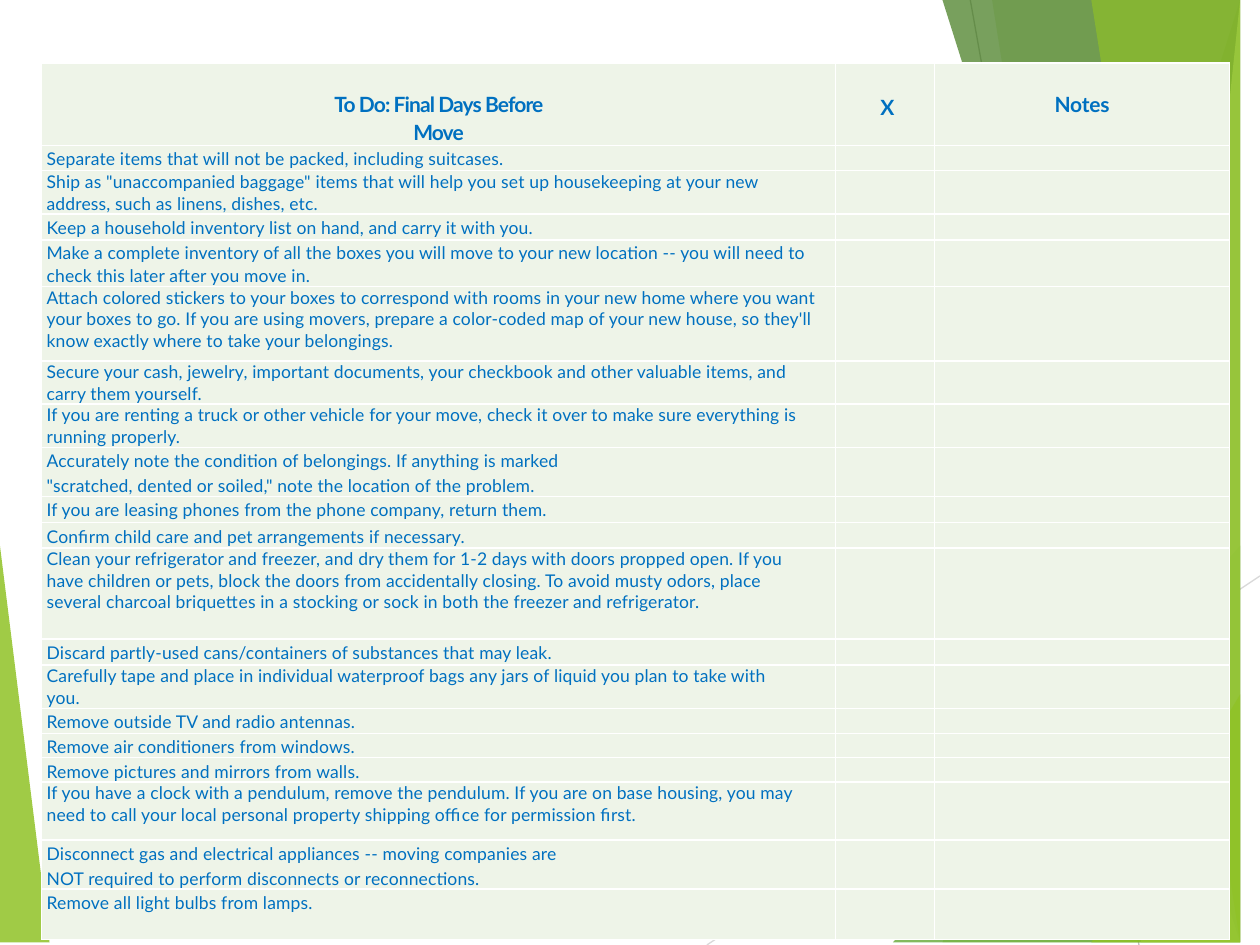
from lxml import etree
from pptx import Presentation
from pptx import util as u
from pptx.dml.color import RGBColor
from pptx.enum import shapes, text
from pptx.oxml.ns import qn

FONT = "Lato"
BLUE, CELL_GREEN, WHITE = "0070C0", "EEF4E8", "FFFFFF"
RIGHT, BOTTOM = 25.4, 19.05  # slide size in cm

# Backdrop: colour, opacity in percent, corner points in cm
LEFT_WEDGE = ("90C226", 85, [(0, 11.15), (1.24, BOTTOM), (0, BOTTOM)])
RIGHT_FACETS = [
    ("90C226", 30, [(24.77, 0), (19.15, BOTTOM), (RIGHT, BOTTOM), (RIGHT, 0)]),
    ("90C226", 20, [(20.02, 0), (23.34, BOTTOM), (RIGHT, BOTTOM), (RIGHT, 0)]),
    ("54A021", 72, [(18.44, BOTTOM), (RIGHT, 10.9), (RIGHT, BOTTOM)]),
    ("3F7819", 70, [(19.48, 0), (24.64, BOTTOM), (RIGHT, BOTTOM), (RIGHT, 0)]),
    ("C0E474", 70, [(24.92, 0), (23.04, BOTTOM), (RIGHT, BOTTOM), (RIGHT, 0)]),
    ("90C226", 65, [(22.43, 0), (25.04, BOTTOM), (RIGHT, BOTTOM), (25.35, 0)]),
    ("90C226", 80, [(22.38, BOTTOM), (RIGHT, 13.59), (RIGHT, BOTTOM)]),
]

# Headings: text, top margin in pt, left and right indent in cm, line spacing, tracking
HEADINGS = [
    ("To Do: Final Days Before Move", 14, 5.54, 5.54, 1.15, -0.5),
    ("X", 17.6, 0.2, 0.1, 1.03, 0.1),
    ("Notes", 14, 1.65, 1.65, 1.15, -0.1),
]
COLUMN_WIDTHS = [16, 2, 5.95]
HEADING_HEIGHT = 1.07

# Tasks: row height in cm, line spacing, right indent in cm, paragraphs
TASKS = [
    (0.51, 1.15, 0.3, ["Separate items that will not be packed, including suitcases."]),
    (0.81, 1.03, 0.3, ['Ship as "unaccompanied baggage" items that will help you set up '
                       "housekeeping at your new address, such as linens, dishes, etc."]),
    (0.53, 1.15, 0.3, ["Keep a household inventory list on hand, and carry it with you."]),
    (0.84, 1.1, 0, ["Make a complete inventory of all the boxes you will move to your new "
                    "location -- you will need to check this later after you move in."]),
    (1.5, 1.03, 0.3, ["Attach colored stickers to your boxes to correspond with rooms in your "
                      "new home where you want your boxes to go. If you are using movers, "
                      "prepare a color-coded map of your new house, so they'll know exactly "
                      "where to take your belongings."]),
    (0.81, 1.03, 0.3, ["Secure your cash, jewelry, important documents, your checkbook and "
                       "other valuable items, and carry them yourself."]),
    (0.84, 1.03, 0.3, ["If you are renting a truck or other vehicle for your move, check it "
                       "over to make sure everything is running properly."]),
    (0.81, 1.15, 0.3, ["Accurately note the condition of belongings. If anything is marked",
                       '"scratched, dented or soiled," note the location of the problem.']),
    (0.53, 1.15, 0.3, ["If you are leasing phones from the phone company, return them."]),
    (0.51, 1.15, 0.3, ["Confirm child care and pet arrangements if necessary."]),
    (1.83, 1.03, 0.3, ["Clean your refrigerator and freezer, and dry them for 1-2 days with "
                       "doors propped open. If you have children or pets, block the doors from "
                       "accidentally closing. To avoid musty odors, place several charcoal "
                       "briquettes in a stocking or sock in both the freezer and refrigerator."]),
    (0.53, 1.15, 0.3, ["Discard partly-used cans/containers of substances that may leak."]),
    (0.81, 1.03, 0.9, ["Carefully tape and place in individual waterproof bags any jars of "
                       "liquid you plan to take with you."]),
    (0.51, 1.15, 0.3, ["Remove outside TV and radio antennas."]),
    (0.48, 1.15, 0.3, ["Remove air conditioners from windows."]),
    (0.48, 1.15, 0.3, ["Remove pictures and mirrors from walls."]),
    (1.17, 1.03, 0.3, ["If you have a clock with a pendulum, remove the pendulum. If you are on "
                       "base housing, you may need to call your local personal property "
                       "shipping office for permission first."]),
    (0.81, 1.15, 0.3, ["Disconnect gas and electrical appliances -- moving companies are",
                       "NOT required to perform disconnects or reconnections."]),
    (1.02, 1.15, 0.3, ["Remove all light bulbs from lamps."]),
]


def color(hex_string):
    return RGBColor.from_string(hex_string)


def add_facet(slide, fill, opacity, corners):
    builder = slide.shapes.build_freeform(*corners[0], scale=u.Cm(1))
    builder.add_line_segments(corners[1:], close=True)
    facet = builder.convert_to_shape()
    facet.shadow.inherit = False
    facet.line.fill.background()
    facet.fill.solid()
    facet.fill.fore_color.rgb = color(fill)
    tint = facet.fill._xPr.find(".//" + qn("a:srgbClr"))
    etree.SubElement(tint, qn("a:alpha"), val=str(opacity * 1000))


def add_ray(slide, start, end, stroke):
    ends = [u.Cm(value) for value in (*start, *end)]
    ray = slide.shapes.add_connector(shapes.MSO_CONNECTOR.STRAIGHT, *ends)
    ray.line.color.rgb = color(stroke)
    ray.line.width = u.Pt(0.75)
    etree.SubElement(ray._element.spPr, qn("a:effectLst"))


def style_cell(cell):
    """White borders, no margins, pale green fill."""
    cell.margin_left = cell.margin_right = cell.margin_top = cell.margin_bottom = 0
    properties = cell._tc.get_or_add_tcPr()
    for side in ("lnL", "lnR", "lnT", "lnB"):
        border = etree.SubElement(properties, qn("a:" + side), w=str(u.Pt(1)))
        fill = etree.SubElement(border, qn("a:solidFill"))
        etree.SubElement(fill, qn("a:srgbClr"), val=WHITE)
    cell.fill.solid()
    cell.fill.fore_color.rgb = color(CELL_GREEN)


def format_paragraph(paragraph, size, bold, left, right, spacing, tracking=0):
    paragraph.line_spacing = spacing
    font = paragraph.font
    font.name, font.size, font.bold = FONT, u.Pt(size), bold
    font.color.rgb = color(BLUE)
    indents = paragraph._p.get_or_add_pPr()
    indents.set("marL", str(u.Cm(left)))
    indents.set("marR", str(u.Cm(right)))
    for run in paragraph.runs:
        run.font._element.set("spc", str(round(tracking * 100)))


def fill_heading(cell, label, top, left, right, spacing, tracking):
    cell.margin_top = u.Pt(top)
    cell.text = label
    paragraph = cell.text_frame.paragraphs[0]
    paragraph.alignment = text.PP_ALIGN.CENTER
    format_paragraph(paragraph, 12, True, left, right, spacing, tracking)


def fill_task(cell, lines, spacing, right):
    cell.text = "\n".join(lines)
    for index, paragraph in enumerate(cell.text_frame.paragraphs):
        format_paragraph(paragraph, 10, False, 0.1, right, spacing, 0.1)
        if index:
            paragraph.space_before = u.Pt(0.5)


def fill_blank(cell):
    """Keep the empty line small so that it does not stretch the row."""
    paragraph = cell.text_frame.paragraphs[0]
    paragraph.font.size = u.Pt(10)
    etree.SubElement(paragraph._p, qn("a:endParaRPr"), sz="1000")


def add_checklist(slide):
    heights = [HEADING_HEIGHT] + [task[0] for task in TASKS]
    checklist = slide.shapes.add_table(
        len(heights), len(COLUMN_WIDTHS), u.Cm(0.84), u.Cm(1.27),
        u.Cm(sum(COLUMN_WIDTHS)), u.Cm(sum(heights))).table
    checklist.first_row = checklist.horz_banding = False
    for column, width in zip(checklist.columns, COLUMN_WIDTHS):
        column.width = u.Cm(width)
    for row, height in zip(checklist.rows, heights):
        row.height = u.Cm(height)
    for cell in checklist.iter_cells():
        style_cell(cell)
    for column, heading in enumerate(HEADINGS):
        fill_heading(checklist.cell(0, column), *heading)
    for row, (_, spacing, right, lines) in enumerate(TASKS, start=1):
        fill_task(checklist.cell(row, 0), lines, spacing, right)
        for column in (1, 2):
            fill_blank(checklist.cell(row, column))


def main():
    deck = Presentation()
    deck.slide_width, deck.slide_height = u.Cm(RIGHT), u.Cm(BOTTOM)
    slide = deck.slides.add_slide(deck.slide_layouts[6])

    # Green backdrop
    add_facet(slide, *LEFT_WEDGE)
    add_ray(slide, (14.25, BOTTOM), (RIGHT, 11.61), "D9D9D9")
    add_ray(slide, (19.56, 0), (22.96, BOTTOM), "BFBFBF")
    for facet in RIGHT_FACETS:
        add_facet(slide, *facet)

    # Moving checklist
    add_checklist(slide)
    deck.save("out.pptx")


if __name__ == "__main__":
    main()
